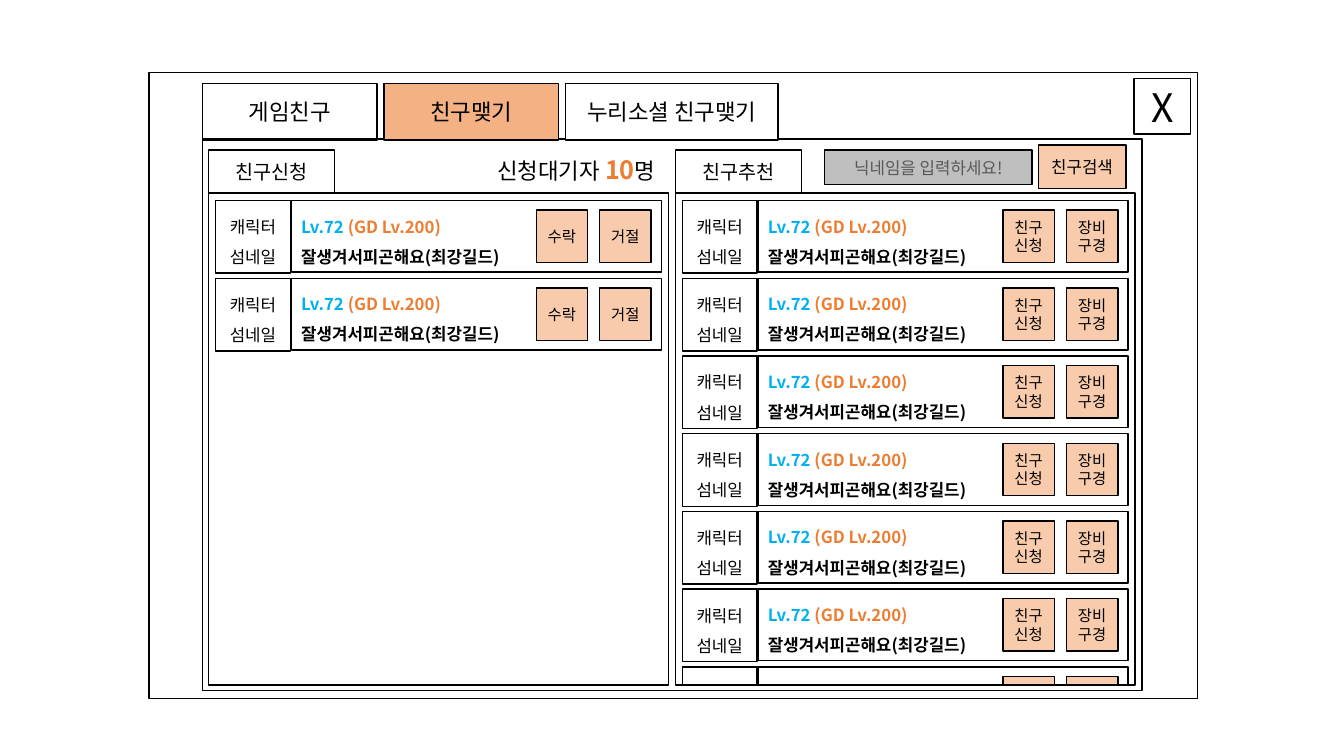
from lxml import etree
from pptx import Presentation
from pptx import util as u
from pptx.dml.color import RGBColor
from pptx.enum import shapes, text
from pptx.oxml import ns

FONT = "Noto Sans CJK KR"
BLACK, WHITE, GREY, DARK_GREY = "000000", "FFFFFF", "BFBFBF", "595959"
PEACH, ORANGE, ACCENT, BLUE = "F8CBAD", "F4B183", "ED7D31", "00B0F0"
CENTER, LEFT, RIGHT = text.PP_ALIGN.CENTER, text.PP_ALIGN.LEFT, text.PP_ALIGN.RIGHT

presentation = Presentation()
presentation.slide_width, presentation.slide_height = u.Inches(13.333), u.Inches(7.5)
slide = presentation.slides.add_slide(presentation.slide_layouts[6])

# All lengths below are columns and rows of this grid
COLUMN = presentation.slide_width / 133.33
ROW = presentation.slide_height / 75


def color(value):
    return RGBColor.from_string(value)


def place(left, top, width, height):
    return [u.Emu(round(length * unit)) for length, unit in
            zip((left, top, width, height), (COLUMN, ROW, COLUMN, ROW))]


def write(shape, paragraphs, size=12, align=CENTER, spacing=None,
          font_color=BLACK, bold=False, anchor=text.MSO_ANCHOR.MIDDLE):
    """Each paragraph is a list of (words, overrides) runs."""
    frame = shape.text_frame
    frame.word_wrap = True
    frame.vertical_anchor = anchor
    for index, runs in enumerate(paragraphs):
        paragraph = frame.add_paragraph() if index else frame.paragraphs[0]
        paragraph.alignment = align
        if spacing:
            paragraph.line_spacing = spacing
        for words, overrides in runs:
            run = paragraph.add_run()
            run.text = words
            run.font.name = FONT
            run.font.size = u.Pt(overrides.get("size", size))
            run.font.bold = overrides.get("bold", bold)
            run.font.color.rgb = color(overrides.get("color", font_color))
            east_asian = etree.SubElement(run.font._element, ns.qn("a:ea"))
            east_asian.set("typeface", FONT)


def box(left, top, width, height, fill=None, lines=(), **text_format):
    """Outlined rectangle with one plain paragraph per line."""
    shape = slide.shapes.add_shape(shapes.MSO_SHAPE.RECTANGLE,
                                   *place(left, top, width, height))
    shape.shadow.inherit = False
    shape.line.color.rgb = color(BLACK)
    shape.line.width = u.Pt(1)
    if fill:
        shape.fill.solid()
        shape.fill.fore_color.rgb = color(fill)
    else:
        shape.fill.background()
    write(shape, [[(line, {})] for line in lines], **text_format)
    return shape


def window(left, top, width, height):
    box(left, top, width, height, WHITE)
    box(left + 5.3, top + 6.6, 93.2, 54.7)
    box(left + 97.7, top + 0.6, 5.6, 5.5, WHITE, ["X"], size=28)


def tab_bar(left, top, height, tabs, gap=0.7):
    for label, width, fill in tabs:
        box(left, top, width, height, fill, [label], size=16)
        left += width + gap


def friend_row(left, top, height, buttons):
    """Friend card; a card too short for its text shows only its outlines."""
    full = height >= 7
    card = box(left + 7.5, top, 36.7, min(7.1, height), WHITE)
    if full:
        write(card, [[("Lv.72 ", {"color": BLUE}), ("(GD Lv.200)", {"color": ACCENT})],
                     [("잘생겨서피곤해요(최강길드)", {})]],
              align=LEFT, spacing=1.5, bold=True)
    box(left, top, 7.4, height, WHITE, ["캐릭터", "섬네일"] if full else [],
        spacing=1.5)
    for index, lines in enumerate(buttons):
        box(left + 31.8 + 6.3 * index, top + 0.95, 5.1, min(5.2, height - 0.95),
            PEACH, lines if full else [], size=11)


def panel(left, top, width, height, heading, buttons, count, pitch=7.71):
    box(left, top, width, height)
    box(left, top - 4.25, 12.5, 4.3, None, [heading], size=14)
    for index in range(count):
        offset = 0.75 + pitch * index
        friend_row(left + 0.7, top + offset, min(7.2, height - offset), buttons)


def waiting_count(left, top, width, height):
    label = slide.shapes.add_textbox(*place(left, top, width, height))
    write(label, [[("신청대기자 ", {}), ("10", {"size": 18, "color": ACCENT, "bold": True}),
                   ("명", {})]],
          size=16, align=RIGHT, anchor=text.MSO_ANCHOR.TOP)


def search_bar(left, top):
    box(left, top + 0.5, 20.6, 3.4, GREY, ["닉네임을 입력하세요!"], font_color=DARK_GREY)
    box(left + 21.2, top, 8.7, 4.3, PEACH, ["친구검색"])


# Window frame and tabs
window(14.8, 7.2, 104, 62.1)
tab_bar(20.1, 8.3, 5.6, [("게임친구", 17.3, None), ("친구맺기", 17.3, ORANGE),
                         ("누리소셜 친구맺기", 21.1, WHITE)])

# Friend requests on the left, recommendations on the right
panel(20.7, 19.15, 45.6, 48.8, "친구신청", [["수락"], ["거절"]], 2)
panel(67, 19.15, 45.6, 48.8, "친구추천", [["친구", "신청"], ["장비", "구경"]], 7)
waiting_count(34.9, 14.8, 31.1, 4)
search_bar(81.8, 14.4)

presentation.save("out.pptx")
